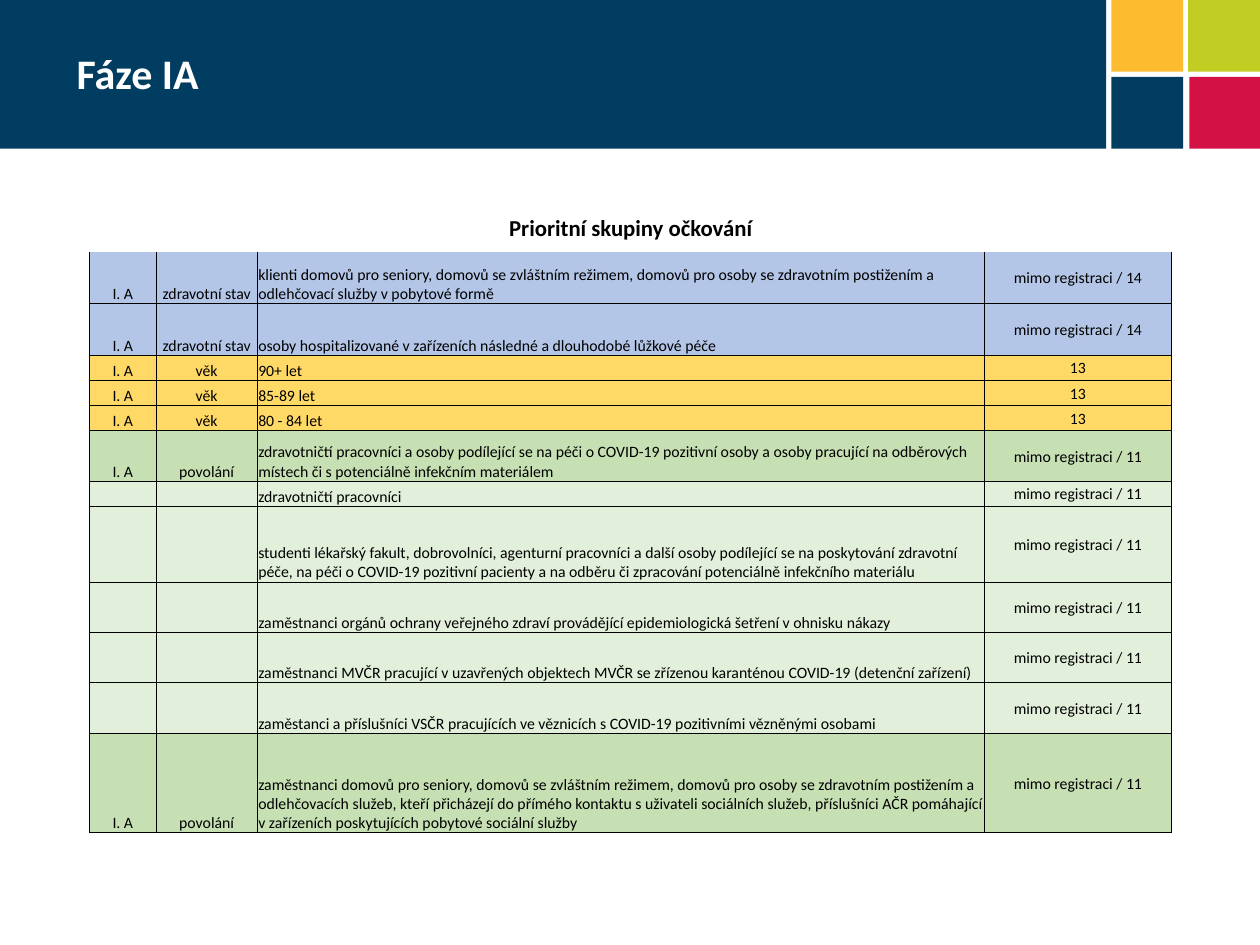
import pptx
import pptx.util
import pptx.dml.color
import pptx.enum.shapes
import pptx.enum.text
import pptx.oxml.ns
import lxml.etree

Inches = pptx.util.Inches
Pt = pptx.util.Pt
ANCHOR = pptx.enum.text.MSO_ANCHOR
ALIGN = pptx.enum.text.PP_ALIGN
qn = pptx.oxml.ns.qn


def color(value):
    return pptx.dml.color.RGBColor.from_string(value)


def style_cell(cell, text, size, bold, centered, anchor, borders):
    cell.margin_left = cell.margin_right = cell.margin_top = Inches(0.01)
    cell.margin_bottom = 0
    cell.vertical_anchor = anchor
    cell.text_frame.text = text
    paragraph = cell.text_frame.paragraphs[0]
    paragraph.alignment = ALIGN.CENTER if centered else ALIGN.LEFT
    for run in paragraph.runs:
        run.font.name = "Calibri"
        run.font.size = Pt(size)
        run.font.bold = bold
        run.font.color.rgb = color("000000")
    if not text:
        lxml.etree.SubElement(paragraph._p, qn("a:endParaRPr"), sz=str(size * 100))
    properties = cell._tc.get_or_add_tcPr()
    for side in "LRTB":
        line = lxml.etree.SubElement(properties, qn("a:ln" + side), w=str(Pt(0.5)))
        if side in borders:
            fill = lxml.etree.SubElement(line, qn("a:solidFill"))
            lxml.etree.SubElement(fill, qn("a:srgbClr"), val="000000")
        else:
            lxml.etree.SubElement(line, qn("a:noFill"))


presentation = pptx.Presentation()
presentation.slide_width = Inches(10)
presentation.slide_height = Inches(7.5)
slide = presentation.slides.add_slide(presentation.slide_layouts[6])

header_blocks = [
    (0, 0, 8.78, 1.18, "003D61"),
    (9.44, 0.61, 0.57, 0.57, "D31145"),
    (9.43, 0, 0.57, 0.57, "C2CD23"),
    (8.82, 0.61, 0.57, 0.57, "003D61"),
    (8.82, 0, 0.57, 0.57, "FDBB30"),
]
for left, top, width, height, fill in header_blocks:
    block = slide.shapes.add_shape(
        pptx.enum.shapes.MSO_SHAPE.RECTANGLE,
        Inches(left), Inches(top), Inches(width), Inches(height))
    block.shadow.inherit = False
    block.fill.solid()
    block.fill.fore_color.rgb = color(fill)
    block.line.fill.background()

title = slide.shapes.add_textbox(Inches(0.51), 0, Inches(8.27), Inches(1.15)).text_frame
title.word_wrap = True
title.vertical_anchor = ANCHOR.MIDDLE
title.text = "Fáze IA"
title_font = title.paragraphs[0].runs[0].font
title_font.name = "Calibri"
title_font.size = Pt(24)
title_font.bold = True
title_font.color.rgb = color("FFFFFF")

BLUE, YELLOW, GREEN, PALE = "B4C6E7", "FFD966", "C6E0B4", "E2EFDA"
criteria = {
    BLUE: ("I. A", "zdravotní stav", "mimo registraci / 14"),
    YELLOW: ("I. A", "věk", "13"),
    GREEN: ("I. A", "povolání", "mimo registraci / 11"),
    PALE: ("", "", "mimo registraci / 11"),
}
groups = [
    (BLUE, 0.41, "klienti domovů pro seniory, domovů se zvláštním režimem, domovů pro osoby se zdravotním postižením a odlehčovací služby v pobytové formě"),
    (BLUE, 0.41, "osoby hospitalizované v zařízeních následné a dlouhodobé lůžkové péče"),
    (YELLOW, 0.2, "90+ let"),
    (YELLOW, 0.2, "85-89 let"),
    (YELLOW, 0.2, "80 - 84 let"),
    (GREEN, 0.4, "zdravotničtí pracovníci a osoby podílející se na péči o COVID-19 pozitivní osoby a osoby pracující na odběrových místech či s potenciálně infekčním materiálem"),
    (PALE, 0.2, "zdravotničtí pracovníci"),
    (PALE, 0.6, "studenti lékařský fakult, dobrovolníci, agenturní pracovníci a další osoby podílející se na poskytování zdravotní péče, na péči o COVID-19 pozitivní pacienty a na odběru či zpracování potenciálně infekčního materiálu"),
    (PALE, 0.4, "zaměstnanci orgánů ochrany veřejného zdraví provádějící epidemiologická šetření v ohnisku nákazy"),
    (PALE, 0.4, "zaměstnanci MVČR pracující v uzavřených objektech MVČR se zřízenou karanténou COVID-19 (detenční zařízení)"),
    (PALE, 0.4, "zaměstanci a příslušníci VSČR pracujících ve věznicích s COVID-19 pozitivními vězněnými osobami"),
    (GREEN, 0.79, "zaměstnanci domovů pro seniory, domovů se zvláštním režimem, domovů pro osoby se zdravotním postižením a odlehčovacích služeb, kteří přicházejí do přímého kontaktu s uživateli sociálních služeb, příslušníci AČR pomáhající v zařízeních poskytujících pobytové sociální služby"),
]

priorities = slide.shapes.add_table(
    len(groups) + 1, 4, Inches(0.71), Inches(1.62), Inches(8.58), Inches(4.96)).table
priorities.first_row = False
priorities.horz_banding = False
for column, width in zip(priorities.columns, (0.53, 0.8, 5.77, 1.49)):
    column.width = Inches(width)

priorities.rows[0].height = Inches(0.38)
heading = priorities.cell(0, 0)
heading.merge(priorities.cell(0, 3))
for column in range(4):
    heading_text = "Prioritní skupiny očkování" if column == 0 else ""
    cell = priorities.cell(0, column)
    style_cell(cell, heading_text, 13, True, True, ANCHOR.MIDDLE, "")
    cell.fill.background()

for row, (fill, height, group) in enumerate(groups, 1):
    priorities.rows[row].height = Inches(height)
    phase, criterion, registration = criteria[fill]
    for column, text in enumerate((phase, criterion, group, registration)):
        cell = priorities.cell(row, column)
        anchor = ANCHOR.MIDDLE if column == 3 else ANCHOR.BOTTOM
        borders = "LRB" if row == 1 else "LRTB"
        style_cell(cell, text, 9, False, column != 2, anchor, borders)
        cell.fill.solid()
        cell.fill.fore_color.rgb = color(fill)

presentation.save("out.pptx")
